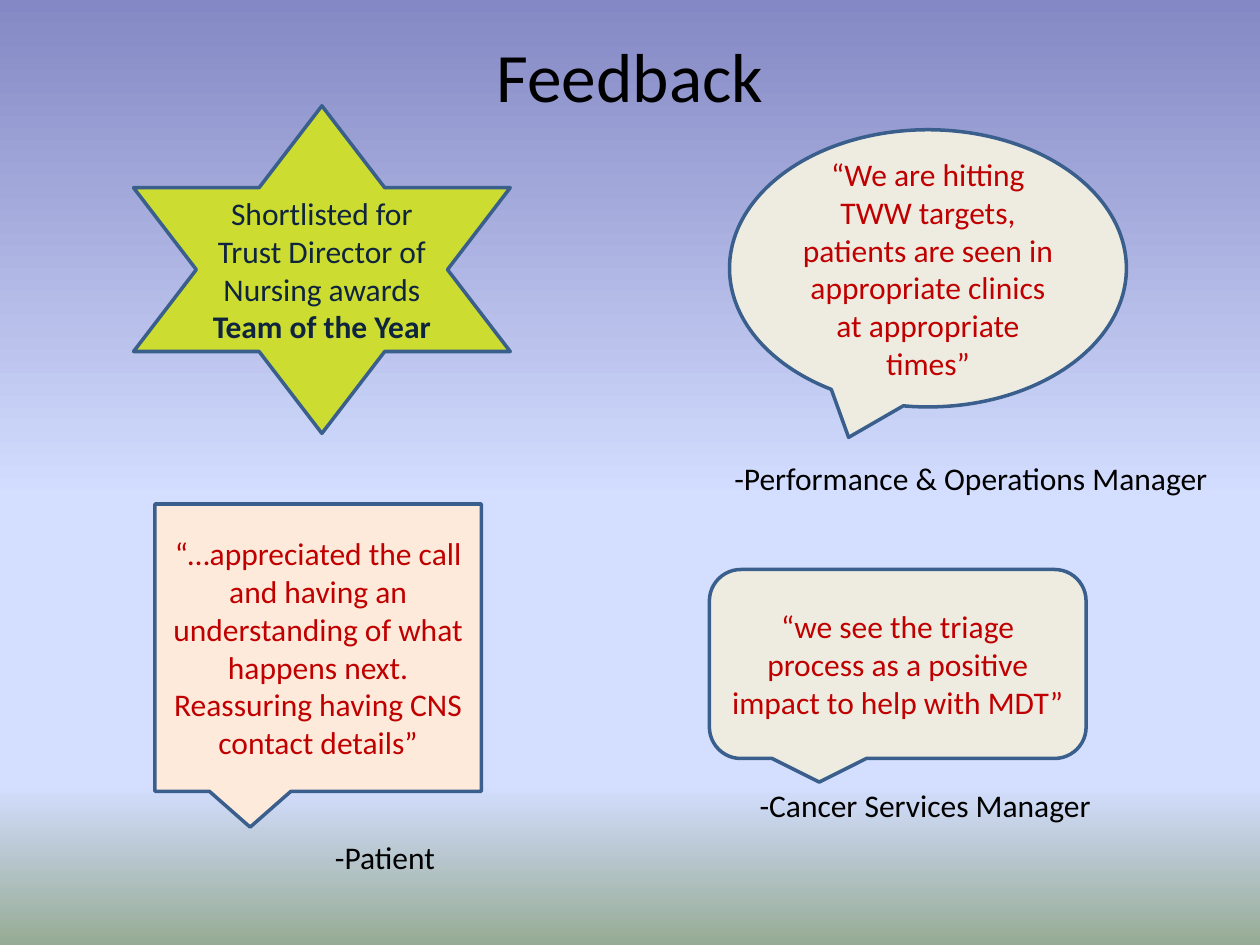
"""Build the Feedback slide of quotes in callouts."""
from lxml import etree
from pptx import Presentation
from pptx.dml.color import RGBColor
from pptx.enum import shapes, text
from pptx.oxml import ns
from pptx.util import Inches, Pt

BLACK = RGBColor(0, 0, 0)
RED = RGBColor(0xC0, 0, 0)
NAVY = RGBColor(0x0F, 0x24, 0x3E)
EDGE = RGBColor(0x3A, 0x5F, 0x8C)
CREAM = RGBColor(0xEE, 0xEC, 0xE1)
PEACH = RGBColor(0xFD, 0xEA, 0xDA)
LIME = RGBColor(0xCC, 0xDC, 0x30)
SKY = [(0, "8488C4"), (53, "D4DEFF"), (83, "D4DEFF"), (100, "96AB94")]
KIND = shapes.MSO_SHAPE


def write(frame, *runs, size=18, color=BLACK, align=text.PP_ALIGN.CENTER,
          anchor=text.MSO_ANCHOR.MIDDLE, wrap=True):
    """Fill a text frame with runs, each given as words and a bold flag."""
    frame.word_wrap = wrap
    frame.vertical_anchor = anchor
    para = frame.paragraphs[0]
    para.alignment = align
    for words, bold in runs:
        run = para.add_run()
        run.text = words
        font = run.font
        font.name, font.size, font.bold = "Calibri", Pt(size), bold
        font.color.rgb = color


def paint(slide):
    """Give the slide a vertical gradient background."""
    fill = slide.background.fill
    fill.gradient()
    fill.gradient_angle = 270
    stops = slide.element.find(".//" + ns.qn("a:gsLst"))
    for stop in list(stops):
        stops.remove(stop)
    for pos, code in SKY:
        stop = etree.SubElement(stops, ns.qn("a:gs"), pos=str(pos * 1000))
        etree.SubElement(stop, ns.qn("a:srgbClr"), val=code)


def head(slide, words):
    """Place the slide title."""
    title = slide.shapes.title
    title.left, title.top = Inches(0.5), Inches(0.26)
    title.width, title.height = Inches(9), Inches(1.25)
    title.text_frame.margin_top = 0
    write(title.text_frame, (words, False), size=39.6,
          anchor=text.MSO_ANCHOR.TOP)


def bubble(slide, kind, box, fill, *runs, color=RED, tail=None):
    """Add an outlined shape with centred text and an optional tail point."""
    shape = slide.shapes.add_shape(kind, *map(Inches, box))
    shape.shadow.inherit = False
    shape.fill.solid()
    shape.fill.fore_color.rgb = fill
    shape.line.color.rgb = EDGE
    shape.line.width = Pt(2)
    for i, value in enumerate(tail or ()):
        shape.adjustments[i] = value
    write(shape.text_frame, *runs, color=color)


def credit(slide, box, words, wrap=False):
    """Add the name of the person who gave a quote."""
    label = slide.shapes.add_textbox(*map(Inches, box))
    write(label.text_frame, (words, False), align=text.PP_ALIGN.LEFT,
          anchor=text.MSO_ANCHOR.TOP, wrap=wrap)
    label.text_frame.auto_size = text.MSO_AUTO_SIZE.SHAPE_TO_FIT_TEXT


def main():
    """Build and save the slide."""
    deck = Presentation()
    deck.slide_width, deck.slide_height = Inches(10), Inches(7.5)
    slide = deck.slides.add_slide(deck.slide_layouts[5])
    paint(slide)
    head(slide, "Feedback")
    bubble(slide, KIND.ROUNDED_RECTANGULAR_CALLOUT, (5.63, 4.52, 2.99, 1.5),
           CREAM, ("“we see the triage process as a positive impact "
                   "to help with MDT” ", False))
    bubble(slide, KIND.OVAL_CALLOUT, (5.79, 1.03, 3.15, 2.2), CREAM,
           ("“We are hitting TWW targets, patients are seen in "
            "appropriate clinics at appropriate times”", False),
           tail=(-0.2, 0.61))
    bubble(slide, KIND.STAR_6_POINT, (1.06, 0.84, 2.99, 2.6), LIME,
           ("Shortlisted for Trust Director of Nursing awards ", False),
           ("Team of the Year", True), color=NAVY)
    credit(slide, (5.93, 6.19, 2.86, 0.4), "-Cancer Services Manager")
    credit(slide, (5.73, 3.59, 4.27, 0.4),
           "-Performance & Operations Manager", wrap=True)
    credit(slide, (2.56, 6.6, 1.01, 0.4), "-Patient")
    bubble(slide, KIND.RECTANGULAR_CALLOUT, (1.23, 4, 2.59, 2.28), PEACH,
           ("“…appreciated the call and having an understanding of what "
            "happens next. Reassuring having CNS contact details”", False))
    deck.save("out.pptx")


if __name__ == "__main__":
    main()
